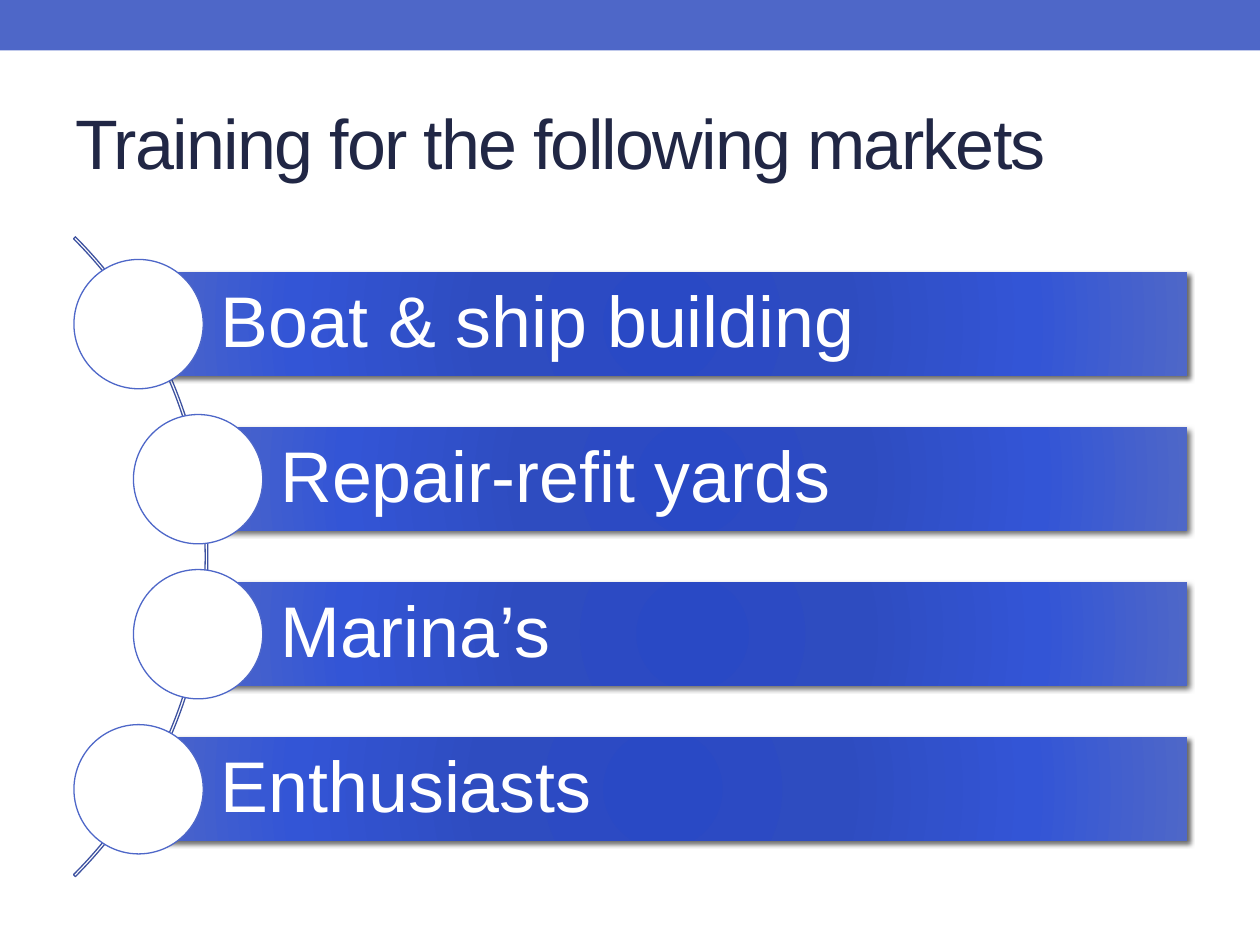
from dataclasses import dataclass

from lxml import etree
from pptx import Presentation
from pptx.dml.color import RGBColor
from pptx.enum.shapes import MSO_SHAPE
from pptx.enum.text import MSO_ANCHOR, MSO_AUTO_SIZE, PP_ALIGN
from pptx.oxml import parse_xml
from pptx.oxml.ns import nsdecls, qn
from pptx.shapes.autoshape import Shape
from pptx.slide import Slide
from pptx.util import Pt

RECT, OVAL, ARC = MSO_SHAPE.RECTANGLE, MSO_SHAPE.OVAL, MSO_SHAPE.BLOCK_ARC
MIDDLE, LEFT = MSO_ANCHOR.MIDDLE, PP_ALIGN.LEFT
NO_FIT = MSO_AUTO_SIZE.NONE


@dataclass(frozen=True)
class Theme:
    font: str = "Arial"
    title_size: float = 40
    bar_size: float = 41
    line_width: float = 0.75
    accent: str = "4E67C8"
    arc_line: str = "3E52A0"
    title: str = "212745"
    white: str = "FFFFFF"
    shadow: str = "000000"
    gradient: tuple[tuple[int, str], ...] = (
        (0, "2949C5"), (34, "2E4CC0"), (70, "3355D6"), (100, "4E67C8"))


@dataclass(frozen=True)
class Market:
    name: str
    center_x: float


THEME = Theme()
OUTER_X, INNER_X = 79.2, 113.2
MARKETS = (
    Market("Boat & ship building", OUTER_X),
    Market("Repair-refit yards", INNER_X),
    Market("Marina’s", INNER_X),
    Market("Enthusiasts", OUTER_X),
)
FIRST_Y, PITCH = 185.2, 88.6
BAR_RIGHT, BAR_HEIGHT = 678.4, 59.2
CIRCLE, ARC_SIZE, ARC_RIGHT = 73.9, 517, 118.8
TEXT_INDENT, TEXT_INSET = 47, 7.9


def add_shape(s: Slide, kind: MSO_SHAPE, x: float, y: float, w: float, h: float,
              fill: str | None = None, line: str | None = None) -> Shape:
    sp = s.shapes.add_shape(kind, Pt(x), Pt(y), Pt(w), Pt(h))
    sp.shadow.inherit = False
    if fill:
        sp.fill.solid()
        sp.fill.fore_color.rgb = RGBColor.from_string(fill)
    else:
        sp.fill.background()
    if line:
        sp.line.color.rgb = RGBColor.from_string(line)
        sp.line.width = Pt(THEME.line_width)
    else:
        sp.line.fill.background()
    return sp


def set_radial_gradient(sp: Shape) -> None:
    stops = "".join(
        f'<a:gs pos="{pos * 1000}"><a:srgbClr val="{color}"/></a:gs>'
        for pos, color in THEME.gradient)
    gradient = parse_xml(
        f'<a:gradFill {nsdecls("a")} rotWithShape="1"><a:gsLst>{stops}</a:gsLst>'
        '<a:path path="circle"><a:fillToRect l="100000" t="100000" '
        'r="100000" b="100000"/></a:path></a:gradFill>')
    props = sp.element.spPr
    props.replace(props.find(qn("a:noFill")), gradient)


def add_shadow(sp: Shape) -> None:
    effects = sp.element.spPr.find(qn("a:effectLst"))
    shadow = etree.SubElement(
        effects, qn("a:outerShdw"), blurRad=str(Pt(3)), dist=str(Pt(2)),
        dir=str(45 * 60000), algn="tl", rotWithShape="0")
    color = etree.SubElement(shadow, qn("a:srgbClr"), val=THEME.shadow)
    etree.SubElement(color, qn("a:alpha"), val="60000")


def set_text(sp: Shape, text: str, size: float, color: str) -> None:
    """Write one left-aligned, vertically centred line."""
    tf = sp.text_frame
    tf.text = text
    tf.word_wrap = True
    tf.auto_size = NO_FIT
    tf.vertical_anchor = MIDDLE
    p = tf.paragraphs[0]
    p.alignment = LEFT
    font = p.runs[0].font
    font.name = THEME.font
    font.size = Pt(size)
    font.color.rgb = RGBColor.from_string(color)


def add_title(s: Slide, text: str) -> None:
    title = s.shapes.title
    title.left, title.top, title.width, title.height = Pt(36), Pt(42), Pt(648), Pt(78)
    set_text(title, text, THEME.title_size, THEME.title)
    r = title.text_frame.paragraphs[0].runs[0]
    r.font._element.set("spc", "-100")


def add_arc(s: Slide) -> None:
    center_y = FIRST_Y + PITCH * (len(MARKETS) - 1) / 2
    arc = add_shape(s, ARC, ARC_RIGHT - ARC_SIZE, center_y - ARC_SIZE / 2,
                    ARC_SIZE, ARC_SIZE, line=THEME.arc_line)
    for i, value in enumerate((189, 27, 0.003)):
        arc.adjustments[i] = value


def add_market(s: Slide, market: Market, center_y: float) -> None:
    x = market.center_x
    bar = add_shape(s, RECT, x, center_y - BAR_HEIGHT / 2, BAR_RIGHT - x, BAR_HEIGHT)
    set_radial_gradient(bar)
    add_shadow(bar)
    set_text(bar, market.name, THEME.bar_size, THEME.white)
    tf = bar.text_frame
    tf.margin_left = Pt(TEXT_INDENT)
    tf.margin_top = tf.margin_right = tf.margin_bottom = Pt(TEXT_INSET)
    tf.paragraphs[0].line_spacing = 0.9
    add_shape(s, OVAL, x - CIRCLE / 2, center_y - CIRCLE / 2, CIRCLE, CIRCLE,
              THEME.white, THEME.accent)


def main() -> None:
    prs = Presentation()
    prs.slide_width, prs.slide_height = Pt(720), Pt(540)
    s = prs.slides.add_slide(prs.slide_layouts.get_by_name("Title Only"))
    add_shape(s, RECT, 0, 0, 720, 28.8, THEME.accent)
    add_title(s, "Training for the following markets")
    add_arc(s)
    for i, market in enumerate(MARKETS):
        add_market(s, market, FIRST_Y + i * PITCH)
    prs.save("out.pptx")


if __name__ == "__main__":
    main()
